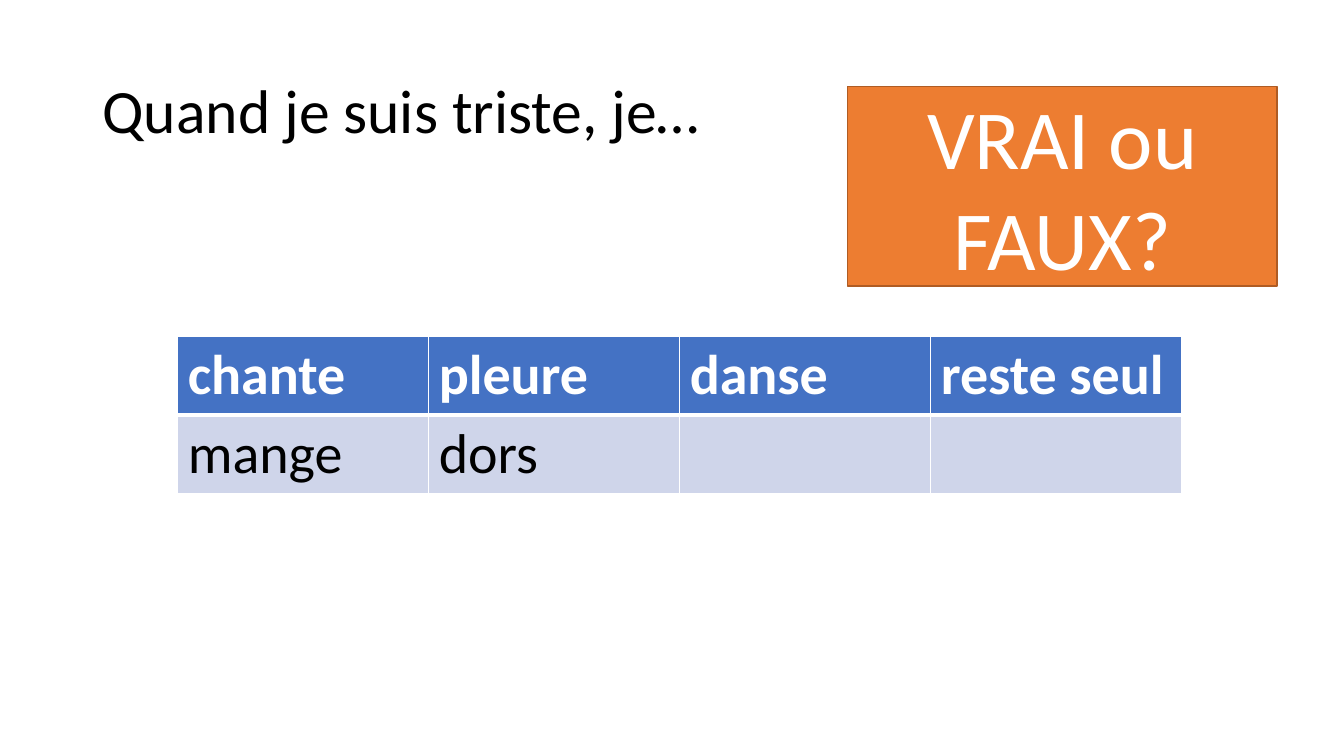
from lxml import etree
from pptx import Presentation
from pptx.dml.color import RGBColor
from pptx.enum.shapes import MSO_SHAPE
from pptx.enum.text import MSO_ANCHOR, MSO_AUTO_SIZE, PP_ALIGN
from pptx.oxml.ns import qn
from pptx.util import Cm, Pt

RECTANGLE = MSO_SHAPE.RECTANGLE
MIDDLE = MSO_ANCHOR.MIDDLE
NO_AUTOFIT = MSO_AUTO_SIZE.NONE
LEFT, CENTER = PP_ALIGN.LEFT, PP_ALIGN.CENTER

FONT = "Calibri"
TITLE_ONLY = 5
COLORS = {
    "black": "000000",
    "white": "FFFFFF",
    "header": "4472C4",
    "band": "CFD5EA",
    "orange": "ED7D31",
    "orange_line": "AF5C24",
}
VERBS = [
    ["chante", "pleure", "danse", "reste seul"],
    ["mange", "dors", "", ""],
]


def color(name):
    return RGBColor.from_string(COLORS[name])


def write(text_frame, text, size, font_color, bold=False, align=LEFT, line_spacing=None):
    paragraph = text_frame.paragraphs[0]
    paragraph.alignment = align
    paragraph.line_spacing = line_spacing
    run = paragraph.add_run()
    run.text = text
    run.font.name = FONT
    run.font.size = Pt(size)
    run.font.bold = bold
    run.font.color.rgb = color(font_color)


def set_title(slide, text):
    title = slide.shapes.title
    title.left, title.top, title.width, title.height = Cm(2.33), Cm(1.01), Cm(29.21), Cm(3.68)
    title.text_frame.auto_size = NO_AUTOFIT
    title.text_frame.vertical_anchor = MIDDLE
    write(title.text_frame, text, 44, "black", line_spacing=0.9)


def add_border(cell, side, width):
    properties = cell._tc.get_or_add_tcPr()
    line = etree.SubElement(properties, qn(f"a:ln{side}"), w=str(Pt(width)))
    fill = etree.SubElement(line, qn("a:solidFill"))
    etree.SubElement(fill, qn("a:srgbClr"), val=COLORS["white"])


def add_verb_table(slide, rows):
    """Add the grid of verbs; a thick rule separates the header row."""
    table = slide.shapes.add_table(
        len(rows), len(rows[0]), Cm(4.48), Cm(8.48), Cm(25.3), Cm(3.88)
    ).table
    for row_index, row in enumerate(rows):
        is_header = row_index == 0
        widths = {"L": 1, "R": 1, "T": 1 if is_header else 3, "B": 3 if is_header else 1}
        for column_index, verb in enumerate(row):
            cell = table.cell(row_index, column_index)
            for side, width in widths.items():
                add_border(cell, side, width)
            cell.fill.solid()
            cell.fill.fore_color.rgb = color("header" if is_header else "band")
            if verb:
                write(cell.text_frame, verb, 40, "white" if is_header else "black", bold=is_header)


def add_question_box(slide, text):
    box = slide.shapes.add_shape(RECTANGLE, Cm(21.36), Cm(2.18), Cm(10.82), Cm(5.03))
    box.shadow.inherit = False
    box.fill.solid()
    box.fill.fore_color.rgb = color("orange")
    box.line.color.rgb = color("orange_line")
    box.line.width = Pt(1)
    box.text_frame.word_wrap = True
    box.text_frame.vertical_anchor = MIDDLE
    write(box.text_frame, text, 60, "white", align=CENTER)


def main():
    presentation = Presentation()
    presentation.slide_width, presentation.slide_height = Cm(33.87), Cm(19.05)
    slide = presentation.slides.add_slide(presentation.slide_layouts[TITLE_ONLY])
    set_title(slide, "Quand je suis triste, je…")
    add_verb_table(slide, VERBS)
    add_question_box(slide, "VRAI ou FAUX?")
    presentation.save("out.pptx")


if __name__ == "__main__":
    main()
